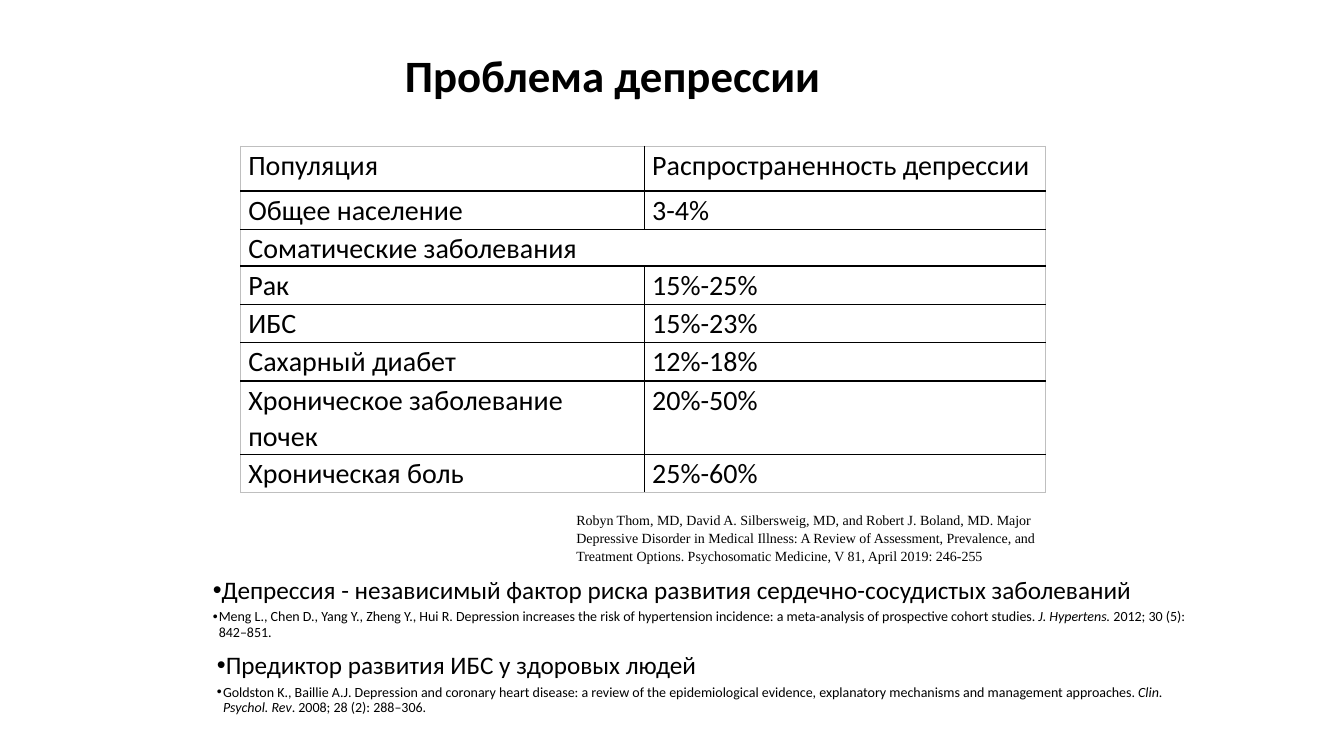
from lxml.etree import SubElement
from pptx import Presentation
from pptx.dml.color import RGBColor
from pptx.enum.text import MSO_ANCHOR, MSO_AUTO_SIZE, PP_ALIGN
from pptx.oxml.ns import qn
from pptx.util import Pt

COLORS = {"text": "000000", "inner_border": "000000", "outer_border": "BFBFBF"}


def style_span(span, size, font="Calibri", bold=False, italic=False):
    span.font.name = font
    span.font.size = Pt(size)
    span.font.bold = bold
    span.font.italic = italic
    span.font.color.rgb = RGBColor.from_string(COLORS["text"])


def place(box, left, top, width, height):
    box.left, box.top, box.width, box.height = Pt(left), Pt(top), Pt(width), Pt(height)


deck = Presentation()
deck.slide_width, deck.slide_height = Pt(960), Pt(540)
page = deck.slides.add_slide(deck.slide_layouts[3])
title, *list_boxes = page.placeholders

# Title
place(title, 282, 11, 648, 90)
title.text_frame.text = "Проблема депрессии"
title.text_frame.vertical_anchor = MSO_ANCHOR.MIDDLE
title.text_frame.auto_size = MSO_AUTO_SIZE.NONE
para = title.text_frame.paragraphs[0]
para.alignment = PP_ALIGN.LEFT
para.line_spacing = 0.9
style_span(para.runs[0], 32, bold=True)

# Prevalence table
rows = [
    ("Популяция", "Распространенность депрессии", 32),
    ("Общее население", "3-4%", 27.4),
    ("Соматические заболевания", "", 23),
    ("Рак", "15%-25%", 27.4),
    ("ИБС", "15%-23%", 27.4),
    ("Сахарный диабет", "12%-18%", 27.4),
    ("Хроническое заболевание почек", "20%-50%", 47.5),
    ("Хроническая боль", "25%-60%", 27.4),
]
frame = page.shapes.add_table(len(rows), 2, Pt(172), Pt(104.4), Pt(575), Pt(239.5))
table = frame.table
table.first_row = table.horz_banding = False
table.columns[0].width, table.columns[1].width = Pt(288.5), Pt(286.5)
table.cell(2, 0).merge(table.cell(2, 1))
last_row = len(rows) - 1

for row, (population, prevalence, height) in enumerate(rows):
    table.rows[row].height = Pt(height)
    for column, text in enumerate((population, prevalence)):
        cell = table.cell(row, column)
        cell.margin_left = cell.margin_right = Pt(5.4)
        cell.margin_top = cell.margin_bottom = 0
        outer_edges = {"lnL": column == 0, "lnR": column == 1 or cell.is_merge_origin,
                       "lnT": row == 0, "lnB": row == last_row}
        for edge, is_outer in outer_edges.items():
            line = SubElement(cell._tc.get_or_add_tcPr(), qn(f"a:{edge}"),
                              w=str(Pt(0.5 if is_outer else 1)))
            color = COLORS["outer_border" if is_outer else "inner_border"]
            SubElement(SubElement(line, qn("a:solidFill")), qn("a:srgbClr"), val=color)
        cell.fill.background()
        if text:
            cell.text_frame.text = text
            para = cell.text_frame.paragraphs[0]
            para.line_spacing = 1.07
            style_span(para.runs[0], 20)

# Table source
source = page.shapes.add_textbox(Pt(404.6), Pt(360.7), Pt(360), Pt(45.4))
source.text_frame.word_wrap = True
source.text_frame.text = (
    "Robyn Thom, MD, David A. Silbersweig, MD, and Robert J. Boland, MD. Major "
    "Depressive Disorder in Medical Illness: A Review of Assessment, Prevalence, and "
    "Treatment Options. Psychosomatic Medicine, V 81, April 2019: 246-255")
para = source.text_frame.paragraphs[0]
para.line_spacing = 1.07
style_span(para.runs[0], 10, font="Times New Roman")

# Findings, each with its reference: (text, size, italic)
findings = [
    ((131, 411.8, 728.6, 36), [
        [("Депрессия - независимый фактор риска развития сердечно-сосудистых заболеваний",
          18, False)],
        [("Meng L., Chen D., Yang Y., Zheng Y., Hui R. Depression increases the risk of "
          "hypertension incidence: a meta-analysis of prospective cohort studies. ", 10, False),
         ("J. Hypertens. ", 10, True),
         ("2012; 30 (5): 842–851.", 10, False)],
    ]),
    ((134, 465.8, 722.9, 24.5), [
        [("Предиктор развития ИБС у здоровых людей", 18, False)],
        [("Goldston K., Baillie A.J. Depression and coronary heart disease: a review of the "
          "epidemiological evidence, explanatory mechanisms and management approaches. ",
          10, False),
         ("Clin. Psychol. Rev", 10, True),
         (". 2008; 28 (2): 288–306.", 10, False)],
    ]),
]
for box, (position, paragraphs) in zip(list_boxes, findings):
    place(box, *position)
    text_frame = box.text_frame
    text_frame.auto_size = MSO_AUTO_SIZE.NONE
    text_frame.vertical_anchor = MSO_ANCHOR.TOP
    text_frame.margin_left, text_frame.margin_right = Pt(21), Pt(5.8)
    text_frame.margin_top = text_frame.margin_bottom = Pt(0.7)
    for index, spans in enumerate(paragraphs):
        para = text_frame.add_paragraph() if index else text_frame.paragraphs[0]
        para.level = 1
        para.line_spacing = 0.9
        para.space_before = Pt(0)
        para.space_after = Pt(spans[0][1] * 0.2)
        properties = para._p.get_or_add_pPr()
        properties.set("marL", str(Pt(4.3)))
        properties.set("indent", str(-Pt(4.3)))
        SubElement(properties, qn("a:buFont"), typeface="Arial")
        SubElement(properties, qn("a:buChar"), char="•")
        for text, size, italic in spans:
            span = para.add_run()
            span.text = text
            style_span(span, size, italic=italic)

deck.save("out.pptx")
